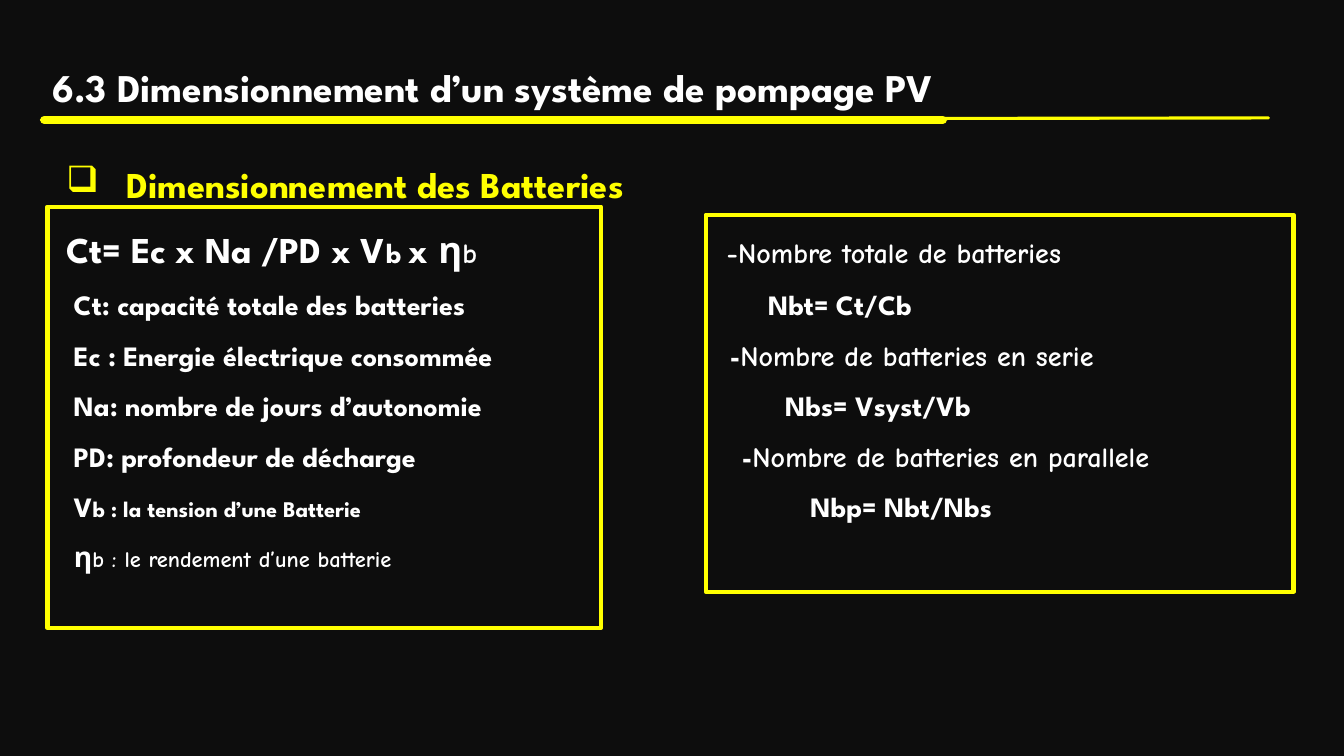
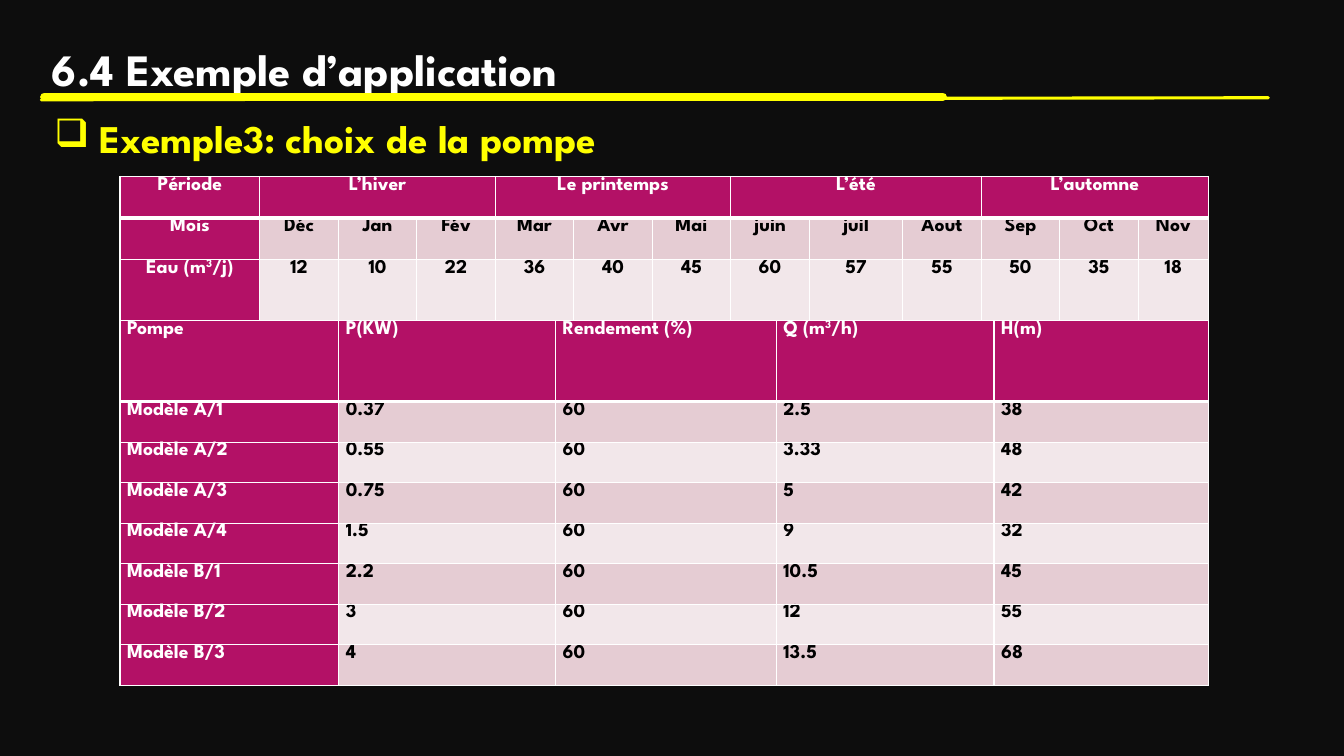
from lxml import etree
from pptx import Presentation
from pptx.dml.color import RGBColor
from pptx.enum.shapes import MSO_CONNECTOR, MSO_SHAPE
from pptx.enum.text import MSO_AUTO_SIZE, PP_ALIGN
from pptx.oxml import parse_xml
from pptx.oxml.ns import nsdecls, qn
from pptx.util import Inches, Pt

STRAIGHT = MSO_CONNECTOR.STRAIGHT
RECTANGLE = MSO_SHAPE.RECTANGLE
GROW = MSO_AUTO_SIZE.SHAPE_TO_FIT_TEXT
LEFT, CENTER = PP_ALIGN.LEFT, PP_ALIGN.CENTER

COLORS = {
    "background": "0D0D0D", "white": "FFFFFF", "black": "000000",
    "yellow": "FFFF00", "magenta": "B31166",
    "dark_band": "E5CCD3", "light_band": "F2E7EA",
}
SPARTAN, COMIC = "League Spartan", "Comic Neue"

# Content: runs are (text, size, font)
BATTERY_TITLE = [(" ", 32, SPARTAN),
                 ("6.3 Dimensionnement d’un système de pompage PV", 28, SPARTAN)]
BATTERY_HEADING = [(" Dimensionnement des Batteries", 26, SPARTAN)]
# Each line: tab stop of the right column, runs
BATTERY_LINES = [
    (6.55, [("Ct= Ec x Na /PD x V", 26, SPARTAN), ("b ", 20, SPARTAN),
            ("x ", 26, SPARTAN), ("η", 26, COMIC),
            ("b\t-Nombre totale de batteries", 20, COMIC)]),
    (6.96, [(" Ct: capacité totale des batteries\tNbt= Ct/Cb", 20, SPARTAN)]),
    (6.58, [(" Ec : Energie électrique consommée\t-", 20, SPARTAN),
            ("Nombre de batteries en serie", 20, COMIC)]),
    (7.13, [(" Na: nombre de jours d’autonomie\tNbs= Vsyst/Vb", 20, SPARTAN)]),
    (6.7, [(" PD: profondeur de décharge\t-", 20, SPARTAN),
           ("Nombre de batteries en parallele", 20, COMIC)]),
    (7.38, [(" V", 20, SPARTAN), ("b : la tension d’une Batterie\t", 16, SPARTAN),
            ("Nbp= Nbt/Nbs", 20, SPARTAN)]),
    (None, [(" ", 20, SPARTAN), ("η", 20, COMIC),
            ("b : le rendement d’une batterie", 16, COMIC)]),
]
FRAMES = [(7, 2.13, 5.83, 3.74), (0.47, 2.05, 5.49, 4.18)]

PUMP_TITLE = [(" 6.4 Exemple d’application", 32, SPARTAN)]
PUMP_HEADING = [(" Exemple3: choix de la pompe", 28, SPARTAN)]
SEASONS = ["L’hiver", "Le printemps", "L’été", "L’automne"]
SEASON_SPAN = 3
# A tuple in a cell is (before, superscript, after)
WATER_ROWS = [
    ["Période"] + [text for season in SEASONS
                   for text in [season] + [""] * (SEASON_SPAN - 1)],
    ["Mois", "Déc", "Jan", "Fév", "Mar", "Avr", "Mai",
     "juin", "juil", "Aout", "Sep", "Oct", "Nov"],
    [("Eau (m", "3", "/j)"), "12", "10", "22", "36", "40", "45",
     "60", "57", "55", "50", "35", "18"],
]
WATER_WIDTHS = [1.39] + [0.78] * 7 + [0.93] + [0.78] * 3 + [0.7]
PUMP_ROWS = [
    ["Pompe", "P(KW)", "Rendement (%)", ("Q (m", "3", "/h)"), "H(m)"],
    ["Modèle A/1", "0.37", "60", "2.5", "38"],
    ["Modèle A/2", "0.55", "60", "3.33", "48"],
    ["Modèle A/3", "0.75", "60", "5", "42"],
    ["Modèle A/4", "1.5", "60", "9", "32"],
    ["Modèle B/1", "2.2", "60", "10.5", "45"],
    ["Modèle B/2", "3", "60", "12", "55"],
    ["Modèle B/3", "4", "60", "13.5", "68"],
]
PUMP_WIDTHS = [2.17, 2.15, 2.19, 2.16, 2.13]
TABLE_LEFT, TABLE_WIDTH = 1.19, 10.8


def rgb(name):
    return RGBColor.from_string(COLORS[name])


def add_span(para, text, size, font, color):
    span = para.add_run()
    span.text = text
    span.font.size = Pt(size)
    span.font.name = font
    span.font.bold = True
    span.font.color.rgb = rgb(color)
    return span


def add_para(para, runs, color, bullet_indent=None, tab=None):
    props = para._p.get_or_add_pPr()
    if bullet_indent:
        props.set("marL", str(Inches(bullet_indent)))
        props.set("indent", str(-Inches(bullet_indent)))
        etree.SubElement(props, qn("a:buChar")).set("char", "❑")
    if tab:
        stops = etree.SubElement(props, qn("a:tabLst"))
        stop = etree.SubElement(stops, qn("a:tab"))
        stop.set("pos", str(Inches(tab)))
        stop.set("algn", "l")
    para.line_spacing = 1.5
    for text, size, font in runs:
        add_span(para, text, size, font, color)


def add_box(page, left, top, width, height):
    box = page.shapes.add_textbox(*map(Inches, (left, top, width, height)))
    box.text_frame.word_wrap = True
    box.text_frame.auto_size = GROW
    return box.text_frame


def add_rule(page, start, end, weight):
    rule = page.shapes.add_connector(STRAIGHT, *map(Inches, start + end))
    rule.line.color.rgb = rgb("yellow")
    rule.line.width = Pt(weight)
    rule.line._get_or_add_ln().set("cap", "rnd")
    etree.SubElement(rule._element.spPr, qn("a:effectLst"))


def add_page(deck, title, title_top, thin_top, thick_top):
    """Dark page with its title and the double yellow rule."""
    page = deck.slides.add_slide(deck.slide_layouts[6])
    page.background.fill.solid()
    page.background.fill.fore_color.rgb = rgb("background")
    frame = add_box(page, 0.3, title_top, 12.2, 0.8)
    add_para(frame.paragraphs[0], title, "white")
    add_rule(page, (0.41, thin_top), (12.58, thin_top - 0.02), 2.25)
    add_rule(page, (0.44, thick_top), (9.35, thick_top), 6)
    return page


def set_borders(cell, bottom):
    props = cell._tc.get_or_add_tcPr()
    for side, weight in (("L", 1), ("R", 1), ("T", 1), ("B", bottom)):
        props.append(parse_xml(
            f'<a:ln{side} {nsdecls("a")} w="{Pt(weight)}"><a:solidFill>'
            f'<a:srgbClr val="{COLORS["white"]}"/></a:solidFill></a:ln{side}>'))


def fill_cell(cell, content, row, column, align):
    is_head = row == 0 or column == 0
    set_borders(cell, 3 if row == 0 else 1)
    band = "dark_band" if row % 2 else "light_band"
    cell.fill.solid()
    cell.fill.fore_color.rgb = rgb("magenta" if is_head else band)
    cell.margin_left = cell.margin_right = Inches(0.07)
    cell.margin_top = cell.margin_bottom = 0
    para = cell.text_frame.paragraphs[0]
    para.alignment = align
    parts = content if isinstance(content, tuple) else (content,)
    for index, text in enumerate(parts):
        if text:
            span = add_span(para, text, 14, SPARTAN, "white" if is_head else "black")
            if index == 1:
                span.font._element.set("baseline", "30000")


def add_grid(page, top, height, rows, widths, row_units, align):
    """Table whose columns and rows share its width and height in proportion."""
    table = page.shapes.add_table(
        len(rows), len(widths), Inches(TABLE_LEFT), Inches(top),
        Inches(TABLE_WIDTH), Inches(height)).table
    table.first_row = table.horz_banding = False
    for column, width in zip(table.columns, widths):
        column.width = Inches(TABLE_WIDTH * width / sum(widths))
    for line, units in zip(table.rows, row_units):
        line.height = Inches(height * units / sum(row_units))
    for r, contents in enumerate(rows):
        for c, content in enumerate(contents):
            fill_cell(table.cell(r, c), content, r, c, align)
    return table


def build_batteries(deck):
    page = add_page(deck, BATTERY_TITLE, 0.26, 1.19, 1.19)
    frame = add_box(page, 0.56, 1.34, 12.46, 4.95)
    add_para(frame.paragraphs[0], BATTERY_HEADING, "yellow", bullet_indent=0.5)
    for tab, runs in BATTERY_LINES:
        add_para(frame.add_paragraph(), runs, "white", tab=tab)
    # Frames around both columns
    for place in FRAMES:
        outline = page.shapes.add_shape(RECTANGLE, *map(Inches, place))
        outline.shadow.inherit = False
        outline.fill.background()
        outline.line.color.rgb = rgb("yellow")
        outline.line.width = Pt(3)


def build_pumps(deck):
    page = add_page(deck, PUMP_TITLE, 0.1, 0.99, 0.96)
    frame = add_box(page, 0.44, 0.85, 12.48, 0.72)
    add_para(frame.paragraphs[0], PUMP_HEADING, "yellow", bullet_indent=0.31)
    # Water need by month, then the pump list
    water = add_grid(page, 1.75, 1.65, WATER_ROWS, WATER_WIDTHS, [1, 1, 2], CENTER)
    for index in range(len(SEASONS)):
        first = 1 + index * SEASON_SPAN
        water.cell(0, first).merge(water.cell(0, first + SEASON_SPAN - 1))
    add_grid(page, 3.18, 3.62, PUMP_ROWS, PUMP_WIDTHS, [2] + [1] * 7, LEFT)


def main():
    deck = Presentation()
    deck.slide_width, deck.slide_height = Inches(13.33), Inches(7.5)
    build_batteries(deck)
    build_pumps(deck)
    deck.save("out.pptx")


if __name__ == "__main__":
    main()
